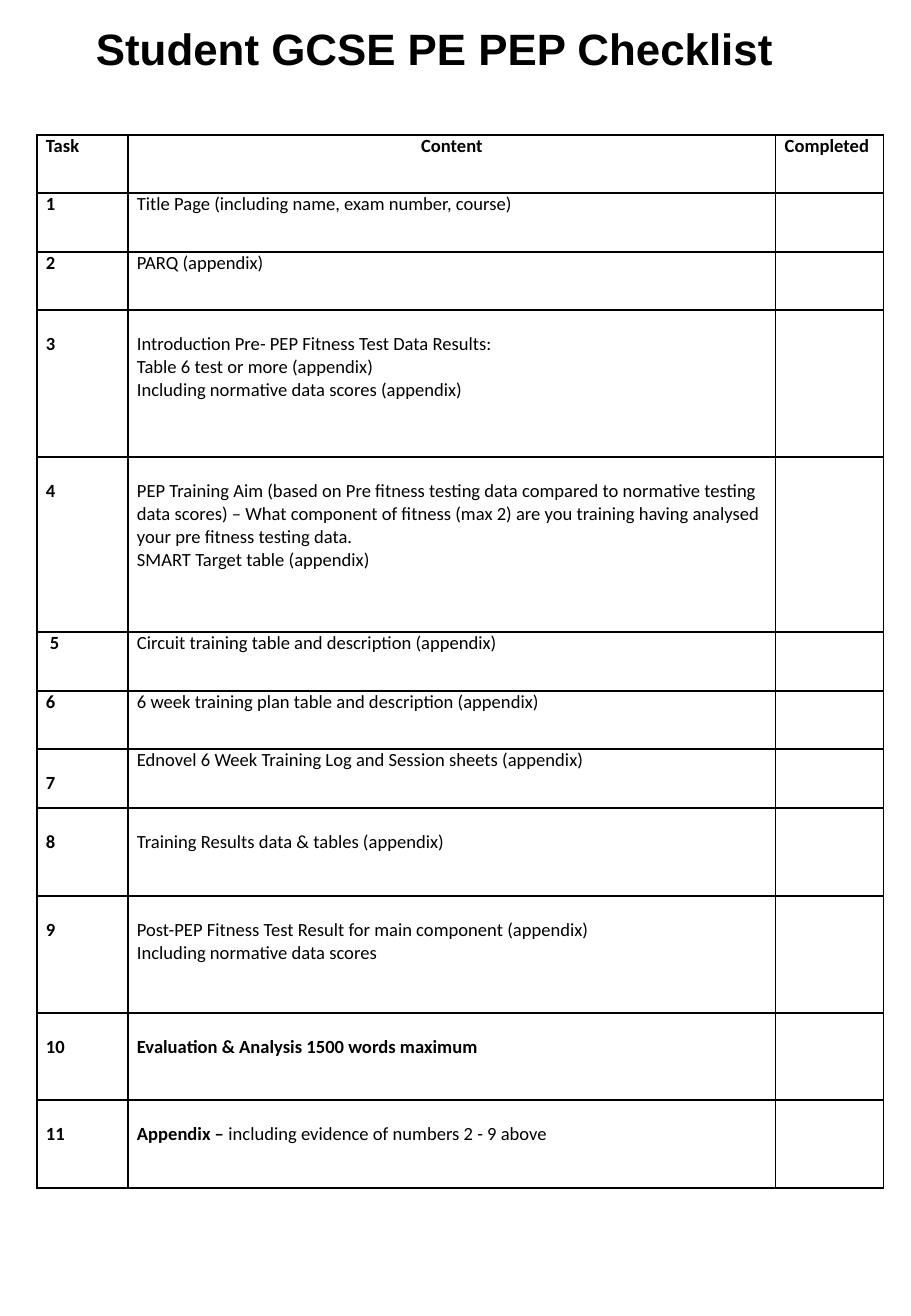
from dataclasses import dataclass
from lxml import etree
from pptx import Presentation, util as u
from pptx.dml.color import RGBColor
from pptx.enum import text
from pptx.oxml.ns import qn

TITLE = "Student GCSE PE PEP Checklist"
HEADINGS = ("Task", "Content", "Completed")
TASKS = [
    ("1", ["Title Page (including name, exam number, course)"]),
    ("2", ["PARQ (appendix)"]),
    ("3", ["Introduction Pre- PEP Fitness Test Data Results:",
           "Table 6 test or more (appendix)",
           "Including normative data scores (appendix)"]),
    ("4", ["PEP Training Aim (based on Pre fitness testing data compared to "
           "normative testing data scores) – What component of fitness (max 2) "
           "are you training having analysed your pre fitness testing data.",
           "SMART Target table (appendix)"]),
    ("5", ["Circuit training table and description (appendix)"]),
    ("6", ["6 week training plan table and description (appendix)"]),
    ("7", ["Ednovel 6 Week Training Log and Session sheets (appendix)"]),
    ("8", ["Training Results data & tables (appendix)"]),
    ("9", ["Post-PEP Fitness Test Result for main component (appendix)",
           "Including normative data scores"]),
    ("10", ["Evaluation & Analysis 1500 words maximum"]),
    ("11", ["Appendix – ", "including evidence of numbers 2 - 9 above"]),
]
LOWERED_TASKS = {"3", "4", "7", "8", "9", "10", "11"}
LOWERED_CONTENT = LOWERED_TASKS - {"7"}
INDENTED_TASK = "5"
BOLD_CONTENT = "10"
BOLD_LEAD = "11"

COLUMNS = (91, 648, 108)
ROWS = (58, 59, 58, 147, 175, 59, 58, 59, 88, 117, 87, 88)
TABLE_LEFT, TABLE_TOP = 37, 135
TITLE_BOX = (96, 23, 680, 50)
PAD, INDENT, LOWER = 9, 4, 23


@dataclass(frozen=True)
class Theme:
    ink: str = "000000"
    title_font: str = "Arial"
    body_font: str = "Calibri"
    title_size: int = 26
    body_size: int = 11
    border: int = 1


THEME = Theme()


def px(n):
    return u.Emu(round(n * 914400 / 121.5))


def style(p, font, size, bold):
    p.font.name = font
    p.font.size = u.Pt(size)
    p.font.color.rgb = RGBColor.from_string(THEME.ink)
    if bold is not None:
        p.font.bold = bold


def draw_borders(cell):
    tc_pr = cell._tc.get_or_add_tcPr()
    for i, side in enumerate(("lnL", "lnR", "lnT", "lnB")):
        ln = etree.Element(qn("a:" + side), w=str(u.Pt(THEME.border)))
        fill = etree.SubElement(ln, qn("a:solidFill"))
        etree.SubElement(fill, qn("a:srgbClr"), val=THEME.ink)
        tc_pr.insert(i, ln)


def fill_cell(cell, lines, bold=False, lowered=False, indent=0, centred=False):
    cell.fill.background()
    cell.margin_left, cell.margin_right = px(PAD + indent), px(PAD)
    cell.margin_top, cell.margin_bottom = px(LOWER if lowered else 0), 0
    draw_borders(cell)
    tf = cell.text_frame
    for i, line in enumerate(lines):
        p = tf.add_paragraph() if i else tf.paragraphs[0]
        runs = [line] if isinstance(line, str) else line
        for j, words in enumerate(runs):
            r = p.add_run()
            r.text = words
            if len(runs) > 1:
                r.font.bold = j == 0
        style(p, THEME.body_font, THEME.body_size, bold if len(runs) == 1 else None)
        if centred:
            p.alignment = text.PP_ALIGN.CENTER


def add_title(s):
    tf = s.shapes.add_textbox(*map(px, TITLE_BOX)).text_frame
    tf.margin_left = tf.margin_right = tf.margin_top = tf.margin_bottom = 0
    tf.vertical_anchor = text.MSO_ANCHOR.MIDDLE
    tf.word_wrap = False
    p = tf.paragraphs[0]
    p.text = TITLE
    style(p, THEME.title_font, THEME.title_size, True)


def add_checklist(s):
    table = s.shapes.add_table(
        len(ROWS), len(COLUMNS), px(TABLE_LEFT), px(TABLE_TOP),
        px(sum(COLUMNS)), px(sum(ROWS))).table
    table.first_row = table.horz_banding = False
    for column, width in zip(table.columns, COLUMNS):
        column.width = px(width)
    for row, height in zip(table.rows, ROWS):
        row.height = px(height)
    for i, heading in enumerate(HEADINGS):
        fill_cell(table.cell(0, i), [heading], bold=True, centred=heading == "Content")
    for i, (task, lines) in enumerate(TASKS, 1):
        fill_cell(table.cell(i, 0), [task], bold=True, lowered=task in LOWERED_TASKS,
                  indent=INDENT if task == INDENTED_TASK else 0)
        fill_cell(table.cell(i, 1), [lines] if task == BOLD_LEAD else lines,
                  bold=task == BOLD_CONTENT, lowered=task in LOWERED_CONTENT)
        fill_cell(table.cell(i, 2), [])


def main():
    prs = Presentation()
    prs.slide_width, prs.slide_height = u.Inches(7.5), u.Inches(10.83)
    s = prs.slides.add_slide(prs.slide_layouts[6])
    add_checklist(s)
    add_title(s)
    prs.save("out.pptx")


if __name__ == "__main__":
    main()
